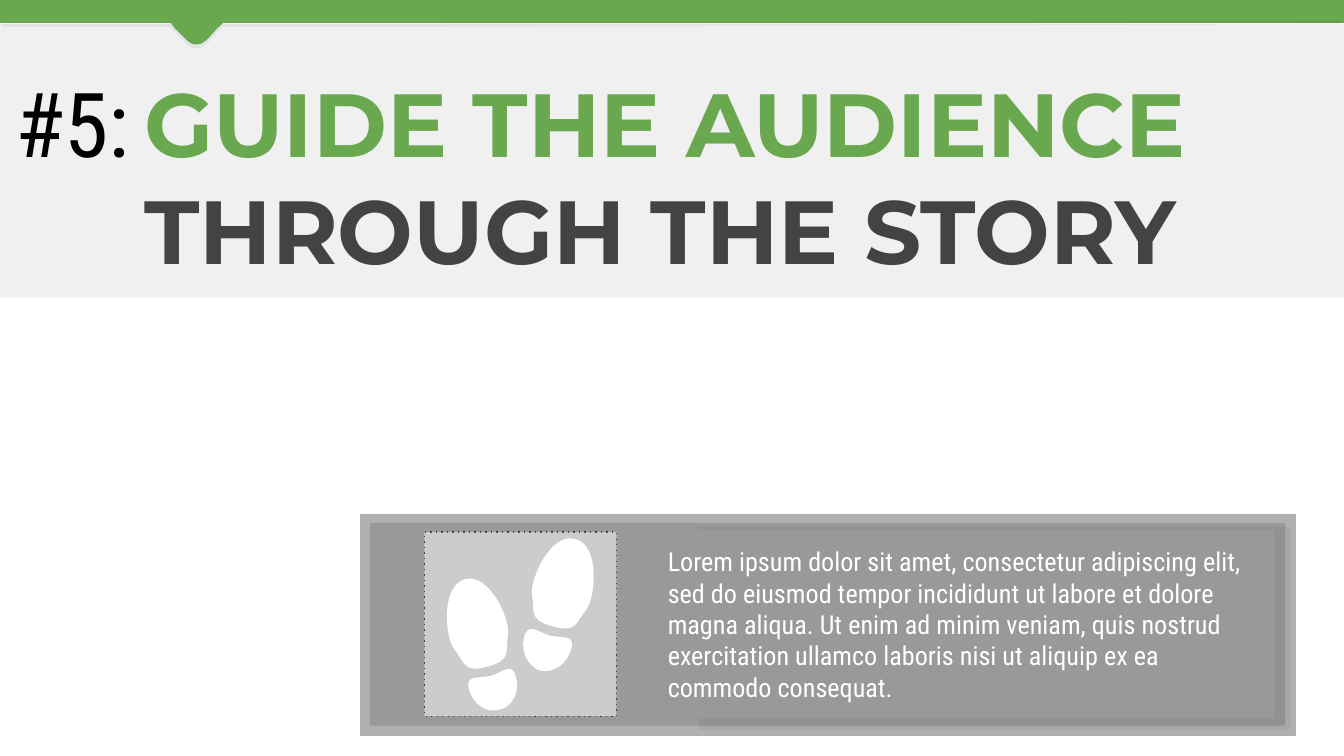
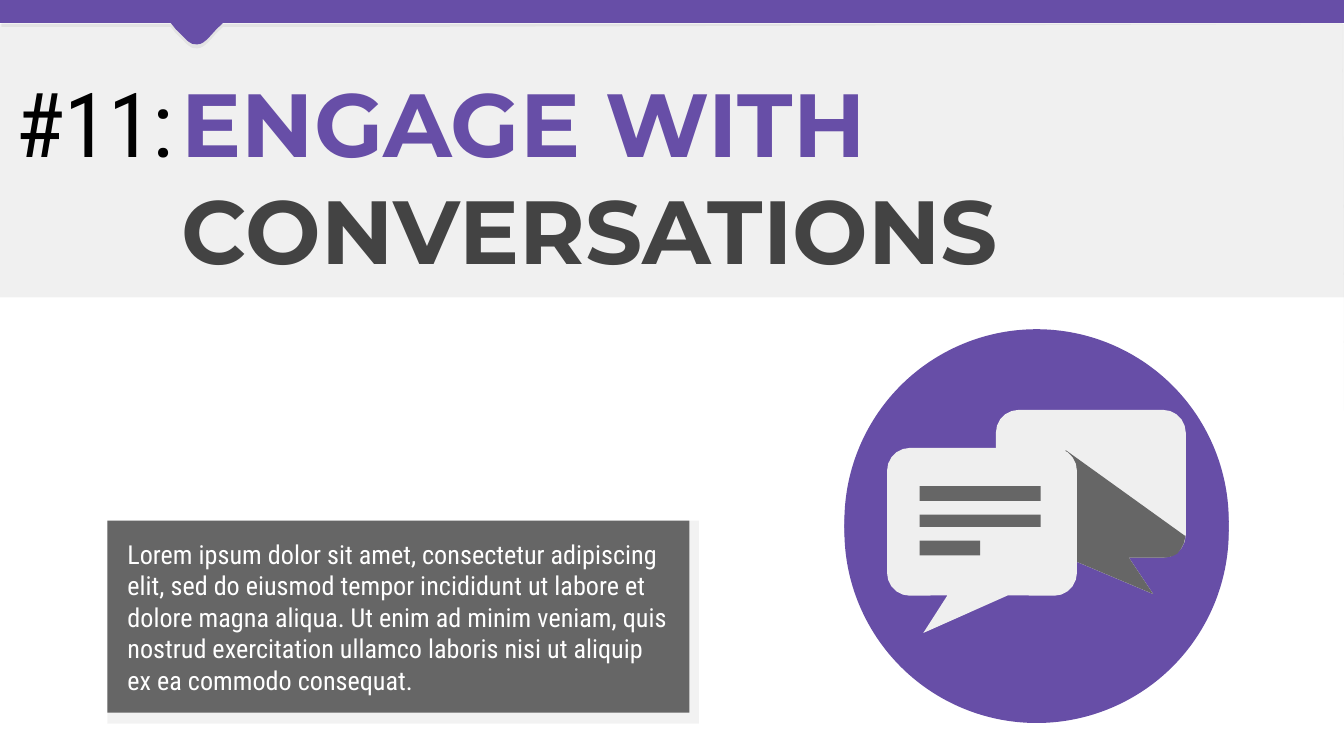
import math

from lxml import etree
from pptx import Presentation
from pptx import util as u
from pptx.dml.color import RGBColor
from pptx.enum import shapes, text
from pptx.oxml.ns import qn

COLUMNS, ROWS = 100, 56.25
CELL = u.Inches(0.1)
GREEN, PURPLE = "6AA84F", "674EA7"
BLACK, WHITE, CHARCOAL = "000000", "FFFFFF", "434343"
PALE, DARK, MID, LIGHT = "EFEFEF", "666666", "999999", "CCCCCC"
TITLE_FONT, BODY_FONT = "Montserrat", "Roboto Condensed"
RECTANGLE = shapes.MSO_SHAPE.RECTANGLE
LOREM = (
    "Lorem ipsum dolor sit amet, consectetur adipiscing elit, sed do eiusmod "
    "tempor incididunt ut labore et dolore magna aliqua. Ut enim ad minim veniam, "
    "quis nostrud exercitation ullamco laboris nisi ut aliquip ex ea commodo consequat."
)
FOOTPRINTS = [
    [(36.5, 50.3), (35.5, 50.5, 34.6, 50.2, 34.9, 51.3),
     (35.2, 52.4, 36.2, 53.1, 37.2, 52.8), (38.1, 52.6, 38.7, 51.5, 38.4, 50.4),
     (38.1, 49.2, 37.5, 50, 36.5, 50.3)],
    [(36.3, 49.6), (38.1, 49.1, 37.6, 48.5, 37.8, 47.2),
     (38, 46.1, 36.4, 42.6, 34.6, 43.1), (32.8, 43.6, 33.1, 47.4, 33.8, 48.3),
     (34.6, 49.3, 34.5, 50.1, 36.3, 49.6)],
    [(40.9, 47.3), (40, 47, 39.3, 46.3, 39, 47.4),
     (38.7, 48.5, 39.3, 49.6, 40.2, 49.9), (41.2, 50.1, 42.2, 49.4, 42.5, 48.3),
     (42.8, 47.2, 41.9, 47.5, 40.9, 47.3)],
    [(42.8, 40.1), (41, 39.6, 39.4, 43.1, 39.6, 44.3),
     (39.8, 45.5, 39.3, 46.1, 41.1, 46.6), (42.9, 47.1, 42.8, 46.4, 43.6, 45.4),
     (44.3, 44.5, 44.7, 40.6, 42.8, 40.1)],
]


def grid(*lengths):
    """Turn grid lengths into slide lengths."""
    return [u.Emu(round(length * CELL)) for length in lengths]


def color(value):
    """Turn a hex string into a colour."""
    return RGBColor.from_string(value)


def paint(shape, fill, opacity=100):
    """Give a shape a flat fill without line or shadow."""
    shape.shadow.inherit = False
    shape.line.fill.background()
    shape.fill.solid()
    shape.fill.fore_color.rgb = color(fill)
    if opacity < 100:
        tint = shape.element.spPr.find(".//" + qn("a:srgbClr"))
        etree.SubElement(tint, qn("a:alpha")).set("val", str(opacity * 1000))
    return shape


def block(parent, at, fill, opacity=100, kind=RECTANGLE):
    """Add a filled preset shape to a slide or group."""
    return paint(parent.shapes.add_shape(kind, *grid(*at)), fill, opacity)


def outline(parent, segments, fill, opacity=100):
    """Add a closed outline of line ends (x, y) and curves (six numbers)."""
    points = [grid(*segment[i:i + 2]) for segment in segments
              for i in range(0, len(segment), 2)]
    builder = parent.shapes.build_freeform(*points[0])
    builder.add_line_segments(points[1:], close=True)
    shape = builder.convert_to_shape()
    route = shape.element.spPr.find(".//" + qn("a:path"))
    lines = iter(route.findall(qn("a:lnTo")))
    for segment in segments[1:]:
        line = next(lines)
        if len(segment) == 6:
            line.tag = qn("a:cubicBezTo")
            for extra in (next(lines), next(lines)):
                line.append(extra[0])
                route.remove(extra)
    return paint(shape, fill, opacity)


def write(shape, lines, size, font, colors, bold=False, anchor=text.MSO_ANCHOR.TOP):
    """Write one paragraph per line, each in its own colour."""
    frame = shape.text_frame
    frame.word_wrap = True
    frame.vertical_anchor = anchor
    frame.margin_left = frame.margin_right = CELL
    frame.margin_top = frame.margin_bottom = CELL
    frame.text = "\n".join(lines)
    for paragraph, value in zip(frame.paragraphs, colors):
        paragraph.alignment = text.PP_ALIGN.LEFT
        for run in paragraph.runs:
            run.font.size = u.Pt(size)
            run.font.name = font
            run.font.bold = bold
            run.font.color.rgb = color(value)


def body(shape):
    """Write the body copy, centred vertically."""
    write(shape, [LOREM], 14, BODY_FONT, [WHITE], anchor=text.MSO_ANCHOR.MIDDLE)


def title(slide, number, lines, left, width, accent):
    """Add the number and the two-line title."""
    number_box = slide.shapes.add_textbox(*grid(0.15, 4.05, 14.3, 5.6))
    write(number_box, [number], 48, BODY_FONT, [BLACK])
    title_box = slide.shapes.add_textbox(*grid(left, 4.05, width, 5.8))
    write(title_box, lines, 48, TITLE_FONT, [accent, CHARCOAL], bold=True)


def notch(top, rightward=False):
    """Give the pointed dip of the ribbon, leftward or rightward."""
    shoulder, tip = top + 0.2, top + 1.6
    if rightward:
        return [(12.7, top), (13.1, top + 0.5),
                (14.1, top + 1.4, 14, tip, 14.7, tip),
                (15.3, tip, 15.8, top + 0.7, 16.4, shoulder), (16.6, top)]
    return [(16.6, top), (16.4, shoulder),
            (15.8, top + 0.7, 15.3, tip, 14.7, tip),
            (14, tip, 14.1, top + 1.4, 13.1, top + 0.5), (12.7, top)]


def header_panel(slide):
    """Add the pale panel behind the title."""
    block(slide, (0, 1.8, COLUMNS, 20.33), "EEEEEE", 85)


def ribbon(slide, accent):
    """Add the coloured top ribbon."""
    segments = [(0, -0.1), (COLUMNS, -0.1), (COLUMNS, 1.7), *notch(1.7), (0, 1.7)]
    outline(slide, segments, accent)


def ribbon_shadow(slide):
    """Add the faint edge below the ribbon."""
    segments = [(99.9, 1.5), (100.1, 56.1), (100.1, 56.1), (99.9, 1.8), (32.9, 2),
                *notch(2), (0.1, 2), (0.1, 1.7), *notch(1.7, True), (32.9, 1.7)]
    outline(slide, segments, BLACK, 5)


def bubble(parent, left, top, tail):
    """Add a rounded speech bubble with a tail."""
    width, height, radius = 14.13, 11, 1.7
    right, bottom = left + width, top + height
    centers = [
        (left + radius, top + radius, 180), (right - radius, top + radius, 270),
        (right - radius, bottom - radius, 0), (left + radius, bottom - radius, 90),
    ]
    points = []
    for x, y, start in centers:
        if start == 90:
            points += tail
        for turn in range(0, 91, 18):
            angle = math.radians(start + turn)
            points.append((x + radius * math.cos(angle), y + radius * math.sin(angle)))
    outline(parent, points, PALE)


def story_slide(slide):
    """Build the slide about guiding the audience."""
    block(slide, (26.8, 38.23, 69.63, 16.53), BLACK, 31)
    header_panel(slide)
    block(slide, (27.53, 38.9, 68.1, 15.1), MID)
    ribbon(slide, GREEN)
    ribbon_shadow(slide)
    title(slide, "#5:", ["GUIDE THE AUDIENCE", "THROUGH THE STORY"], 9.75, 89.2, GREEN)
    block(slide, (52, 39.2, 44, 15.1), BLACK, 5)
    body(block(slide, (48.7, 39.38, 46.1, 14.1), MID))
    icon_tile = block(slide, (31.58, 39.6, 14.3, 13.7), LIGHT)
    icon_tile.line.color.rgb = color(CHARCOAL)
    icon_tile.line.width = u.Pt(0.75)
    line = icon_tile.element.spPr.find(qn("a:ln"))
    etree.SubElement(line, qn("a:prstDash")).set("val", "dot")
    footprints = slide.shapes.add_group_shape()
    for footprint in FOOTPRINTS:
        outline(footprints, footprint, WHITE)


def conversation_slide(slide):
    """Build the slide about conversations."""
    header_panel(slide)
    ribbon_shadow(slide)
    title(slide, "#11:", ["ENGAGE WITH", "CONVERSATIONS"], 12.53, 91.2, PURPLE)
    ribbon(slide, PURPLE)
    block(slide, (8, 38.74, 44, 15.1), BLACK, 5)
    note = slide.shapes.add_group_shape()
    block(note, (8, 38.74, 43.3, 14.3), DARK)
    body(note.shapes.add_textbox(*grid(8.5, 39.25, 42.4, 13.3)))
    icon = slide.shapes.add_group_shape()
    for top in (24.5, 25.2):
        block(icon, (62.83, top, 28.6, 28.6), PURPLE, kind=shapes.MSO_SHAPE.OVAL)
    back_tail = [(84, 41.5), (85.8, 44.2), (79.4, 41.5)]
    bubble(icon, 74.1, 30.5, back_tail)
    shade = [(79.3, 33.5), (88.2, 39.9), (88.1, 40.4), (87.9, 40.8), (87.6, 41.2),
             (87.2, 41.4), (86.7, 41.5), *back_tail, (76.5, 41.5), (76.4, 41.4)]
    outline(icon, shade, DARK)
    bubble(icon, 66, 33.33, [(75, 44.3), (68.7, 47.1), (70.5, 44.3)])
    for top, width, height in ((36.17, 9, 1.1), (38.3, 9, 0.9), (40.23, 4.5, 1.1)):
        block(icon, (68.43, top, width, height), DARK)


def main():
    """Build and save the presentation."""
    presentation = Presentation()
    presentation.slide_width, presentation.slide_height = grid(COLUMNS, ROWS)
    for build in (story_slide, conversation_slide):
        build(presentation.slides.add_slide(presentation.slide_layouts[6]))
    presentation.save("out.pptx")


if __name__ == "__main__":
    main()
